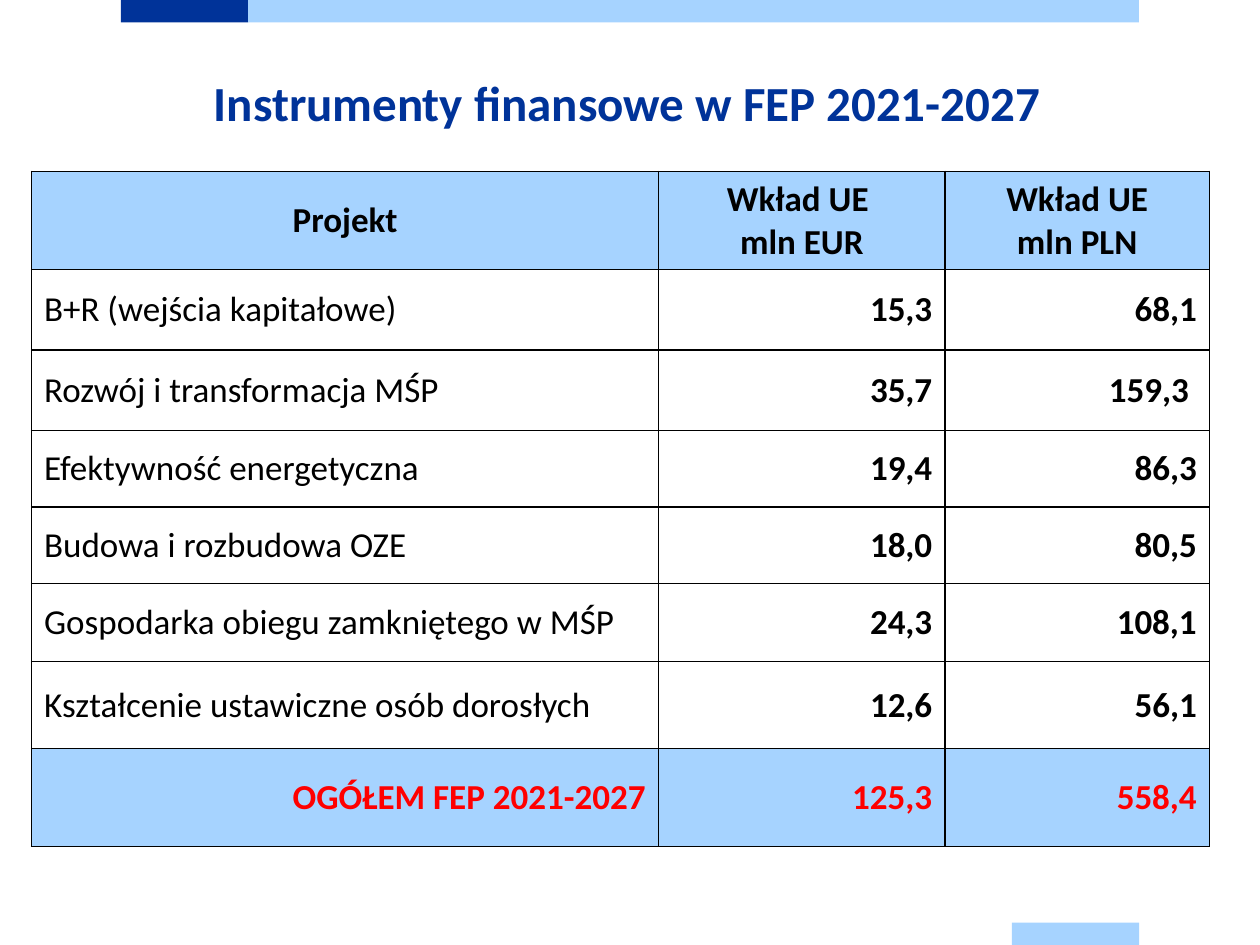
from lxml.etree import SubElement
from pptx import Presentation
from pptx.dml.color import RGBColor
from pptx.enum.shapes import MSO_SHAPE as Shape
from pptx.enum.text import MSO_ANCHOR as Anchor, PP_ALIGN as Align
from pptx.oxml.ns import qn
from pptx.util import Pt

NAVY = RGBColor(0x00, 0x33, 0x99)
SKY = RGBColor(0xA6, 0xD3, 0xFF)
WHITE = RGBColor(0xFF, 0xFF, 0xFF)
BLACK = RGBColor(0x00, 0x00, 0x00)
RED = RGBColor(0xFF, 0x00, 0x00)
FONT = "Calibri"

COLUMN_WIDTHS = [358.4, 163.6, 151.2]
ROW_HEIGHTS = [56, 46, 46, 43.8, 43.8, 44.5, 49.8, 56]
ROWS = [
    ("Projekt", "Wkład UE \nmln EUR", "Wkład UE\nmln PLN"),
    ("B+R (wejścia kapitałowe)", "15,3", "68,1"),
    ("Rozwój i transformacja MŚP", "35,7", "159,3 "),
    ("Efektywność energetyczna", "19,4", "86,3"),
    ("Budowa i rozbudowa OZE", "18,0", "80,5"),
    ("Gospodarka obiegu zamkniętego w MŚP", "24,3", "108,1"),
    ("Kształcenie ustawiczne osób dorosłych", "12,6", "56,1"),
    ("OGÓŁEM FEP 2021-2027", "125,3", "558,4"),
]


def write_text(frame, text, size, color, bold, align):
    frame.text = text
    for para in frame.paragraphs:
        para.alignment = align
        font = para.font
        font.name, font.size, font.bold = FONT, Pt(size), bold
        font.color.rgb = color


def add_bar(page, left, top, width, height, color):
    bar = page.shapes.add_shape(Shape.RECTANGLE, Pt(left), Pt(top), Pt(width), Pt(height))
    bar.shadow.inherit = False
    bar.fill.solid()
    bar.fill.fore_color.rgb = color
    bar.line.fill.background()


def add_page_bars(page, left, width, page_height):
    thickness, short = 12.8, 72.7
    add_bar(page, left, 0, short, thickness, NAVY)
    add_bar(page, left + short, 0, width - short, thickness, SKY)
    add_bar(page, left + width - short, page_height - thickness, short, thickness, SKY)


def add_title(page, left, top, width, height):
    box = page.shapes.add_textbox(Pt(left), Pt(top), Pt(width), Pt(height))
    frame = box.text_frame
    frame.word_wrap = True
    frame.vertical_anchor = Anchor.MIDDLE
    write_text(frame, "Instrumenty finansowe w FEP 2021-2027", 28, NAVY, True, Align.CENTER)


def add_borders(cell):
    properties = cell._tc.get_or_add_tcPr()
    for index, side in enumerate(("a:lnL", "a:lnR", "a:lnT", "a:lnB")):
        line = SubElement(properties, qn(side), w=str(Pt(1)))
        fill = SubElement(line, qn("a:solidFill"))
        SubElement(fill, qn("a:srgbClr"), val=str(BLACK))
        # Borders come before the cell fill
        properties.insert(index, line)


def add_funding_table(page, left, top):
    table = page.shapes.add_table(
        len(ROWS), len(COLUMN_WIDTHS), Pt(left), Pt(top),
        Pt(sum(COLUMN_WIDTHS)), Pt(sum(ROW_HEIGHTS))).table
    for column, width in zip(table.columns, COLUMN_WIDTHS):
        column.width = Pt(width)
    for row, height in zip(table.rows, ROW_HEIGHTS):
        row.height = Pt(height)
    for row_index, texts in enumerate(ROWS):
        is_header = row_index == 0
        is_total = row_index == len(ROWS) - 1
        for column_index, text in enumerate(texts):
            is_name = column_index == 0 and not (is_header or is_total)
            align = Align.CENTER if is_header else Align.LEFT if is_name else Align.RIGHT
            cell = table.cell(row_index, column_index)
            cell.vertical_anchor = Anchor.MIDDLE
            cell.fill.solid()
            cell.fill.fore_color.rgb = SKY if is_header or is_total else WHITE
            add_borders(cell)
            write_text(cell.text_frame, text, 20, RED if is_total else BLACK, not is_name, align)


def main():
    deck = Presentation()
    deck.slide_width, deck.slide_height = Pt(720), Pt(540)
    page = deck.slides.add_slide(deck.slide_layouts[6])
    add_page_bars(page, 69.1, 581.8, 540)
    add_title(page, 21.6, 25.2, 673.2, 66.2)
    add_funding_table(page, 18, 98)
    deck.save("out.pptx")


if __name__ == "__main__":
    main()
